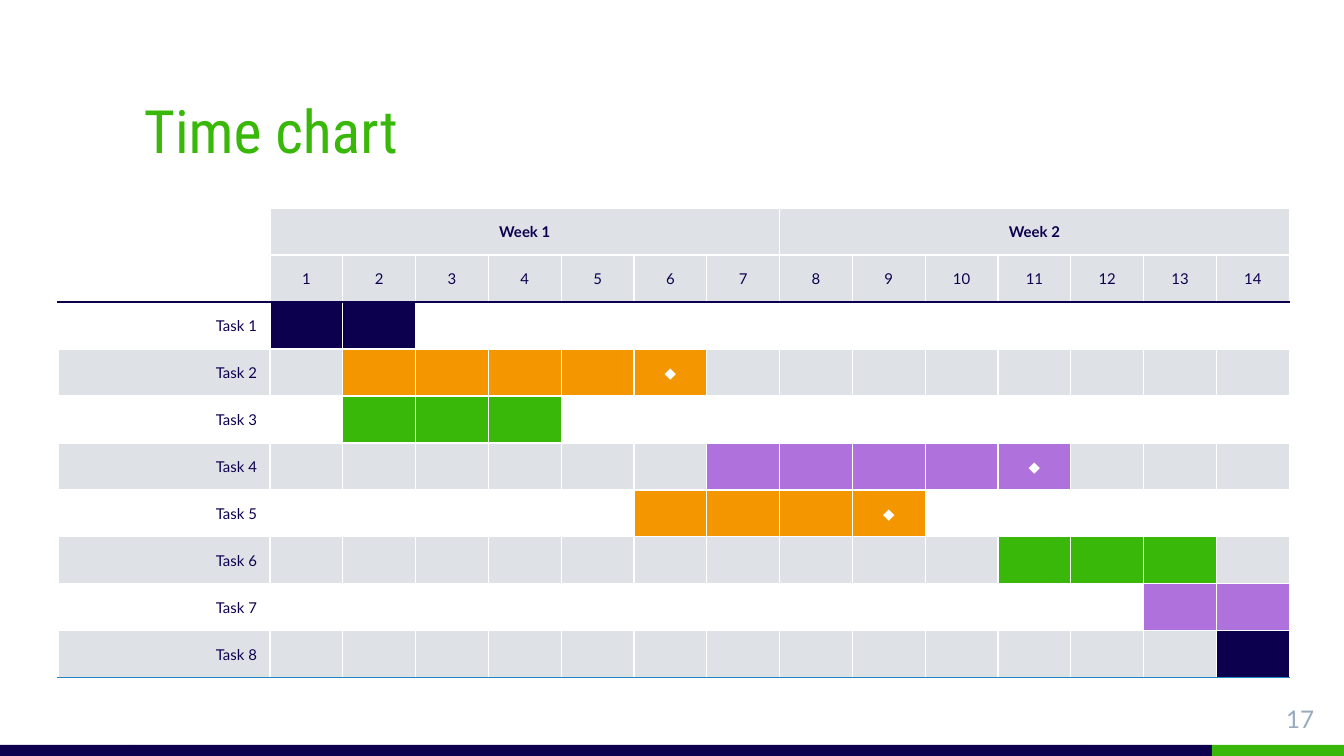
from lxml import etree
from pptx import Presentation
from pptx.dml.color import RGBColor
from pptx.enum.shapes import MSO_SHAPE
from pptx.enum.text import MSO_ANCHOR, PP_ALIGN
from pptx.oxml.ns import qn
from pptx.util import Pt

RECTANGLE = MSO_SHAPE.RECTANGLE
TOP, MIDDLE, BOTTOM = MSO_ANCHOR.TOP, MSO_ANCHOR.MIDDLE, MSO_ANCHOR.BOTTOM
LEFT, CENTER, RIGHT = PP_ALIGN.LEFT, PP_ALIGN.CENTER, PP_ALIGN.RIGHT

NAVY = RGBColor(0x0C, 0x00, 0x4E)
GREEN = RGBColor(0x39, 0xB8, 0x0A)
ORANGE = RGBColor(0xF3, 0x96, 0x00)
PURPLE = RGBColor(0xAF, 0x71, 0xDB)
GREY = RGBColor(0xDE, 0xE2, 0xE6)
SLATE = RGBColor(0x97, 0xAB, 0xBC)
BLUE = RGBColor(0x21, 0x85, 0xC5)
WHITE = RGBColor(0xFF, 0xFF, 0xFF)

PX = 914400 / 134.4
DAYS = 14
HEADER_ROWS = 2
ROW_HEIGHT = 47
LABEL_WIDTH, DAYS_WIDTH = 212, 1020

# First day, last day, colour, whether the last day is a milestone
TASKS = [
    (1, 2, NAVY, False),
    (2, 6, ORANGE, True),
    (2, 4, GREEN, False),
    (7, 11, PURPLE, True),
    (6, 9, ORANGE, True),
    (11, 13, GREEN, False),
    (13, 14, PURPLE, False),
    (14, 14, NAVY, False),
]


def px(length):
    return round(length * PX)


def set_border(cell, side, color, points):
    """Draw one cell border; call in the order L, R, T, B and before the fill."""
    line = etree.SubElement(cell._tc.get_or_add_tcPr(), qn(f"a:ln{side}"), w=str(Pt(points)))
    solid = etree.SubElement(line, qn("a:solidFill"))
    etree.SubElement(solid, qn("a:srgbClr"), val=str(color))


prs = Presentation()
prs.slide_width, prs.slide_height = px(1344), px(756)
slide = prs.slides.add_slide(prs.slide_layouts[6])

# Footer strip
for left, width, color in [(1081, 131, NAVY), (1212, 132, GREEN), (0, 131, NAVY), (131, 950, NAVY)]:
    strip = slide.shapes.add_shape(RECTANGLE, px(left), px(745), px(width), px(11))
    strip.shadow.inherit = False
    strip.fill.solid()
    strip.fill.fore_color.rgb = color
    strip.line.fill.background()

# Title and page number
for text, box, anchor, align, font_name, size, color in [
    ("Time chart", (131, 52, 950, 127), BOTTOM, LEFT, "Roboto Condensed", 32, GREEN),
    ("17", (1246, 691, 81, 46), TOP, RIGHT, "Lato", 13, SLATE),
]:
    frame = slide.shapes.add_textbox(*map(px, box)).text_frame
    frame.word_wrap = True
    frame.vertical_anchor = anchor
    frame.margin_left = frame.margin_right = frame.margin_top = frame.margin_bottom = px(13)
    paragraph = frame.paragraphs[0]
    paragraph.text = text
    paragraph.alignment = align
    paragraph.font.name = font_name
    paragraph.font.size = Pt(size)
    paragraph.font.color.rgb = color

# Time chart
row_count = HEADER_ROWS + len(TASKS)
chart = slide.shapes.add_table(
    row_count, DAYS + 1, px(58), px(208), px(LABEL_WIDTH + DAYS_WIDTH), px(ROW_HEIGHT * row_count)
).table
chart.first_row = chart.horz_banding = False
for row in chart.rows:
    row.height = px(ROW_HEIGHT)
for day, column in enumerate(chart.columns):
    column.width = px(DAYS_WIDTH / DAYS if day else LABEL_WIDTH)

for r in range(row_count):
    for day in range(DAYS + 1):
        cell = chart.cell(r, day)
        text, fill, color, align = "", None, NAVY, CENTER
        if r < HEADER_ROWS:
            if day:
                fill = GREY
                if r == 1:
                    text = str(day)
                elif day % 7 == 1:
                    text = f"Week {day // 7 + 1}"
        else:
            number = r - HEADER_ROWS + 1
            start, end, bar, milestone = TASKS[number - 1]
            fill = GREY if number % 2 == 0 else None
            if day == 0:
                text, align = f"Task {number}", RIGHT
            elif start <= day <= end:
                fill = bar
                if milestone and day == end:
                    text, color = "◆", WHITE

        above = (NAVY, 1) if r == HEADER_ROWS else (WHITE, 0.75)
        below = (WHITE, 0.75)
        if r == HEADER_ROWS - 1:
            below = (NAVY, 1)
        elif r == row_count - 1:
            below = (BLUE, 0.75)
        set_border(cell, "L", WHITE, 0.75)
        set_border(cell, "R", WHITE, 0.75)
        set_border(cell, "T", *above)
        set_border(cell, "B", *below)

        if fill is None:
            cell.fill.background()
        else:
            cell.fill.solid()
            cell.fill.fore_color.rgb = fill

        cell.vertical_anchor = MIDDLE
        cell.margin_left = cell.margin_right = px(13)
        cell.margin_top = cell.margin_bottom = px(7 if text else 0)
        paragraph = cell.text_frame.paragraphs[0]
        paragraph.text = text
        paragraph.alignment = align
        paragraph.font.name = "Lato"
        paragraph.font.size = Pt(8)
        paragraph.font.bold = r == 0
        paragraph.font.color.rgb = color

for first_day in (1, 8):
    chart.cell(0, first_day).merge(chart.cell(0, first_day + 6))

prs.save("out.pptx")
